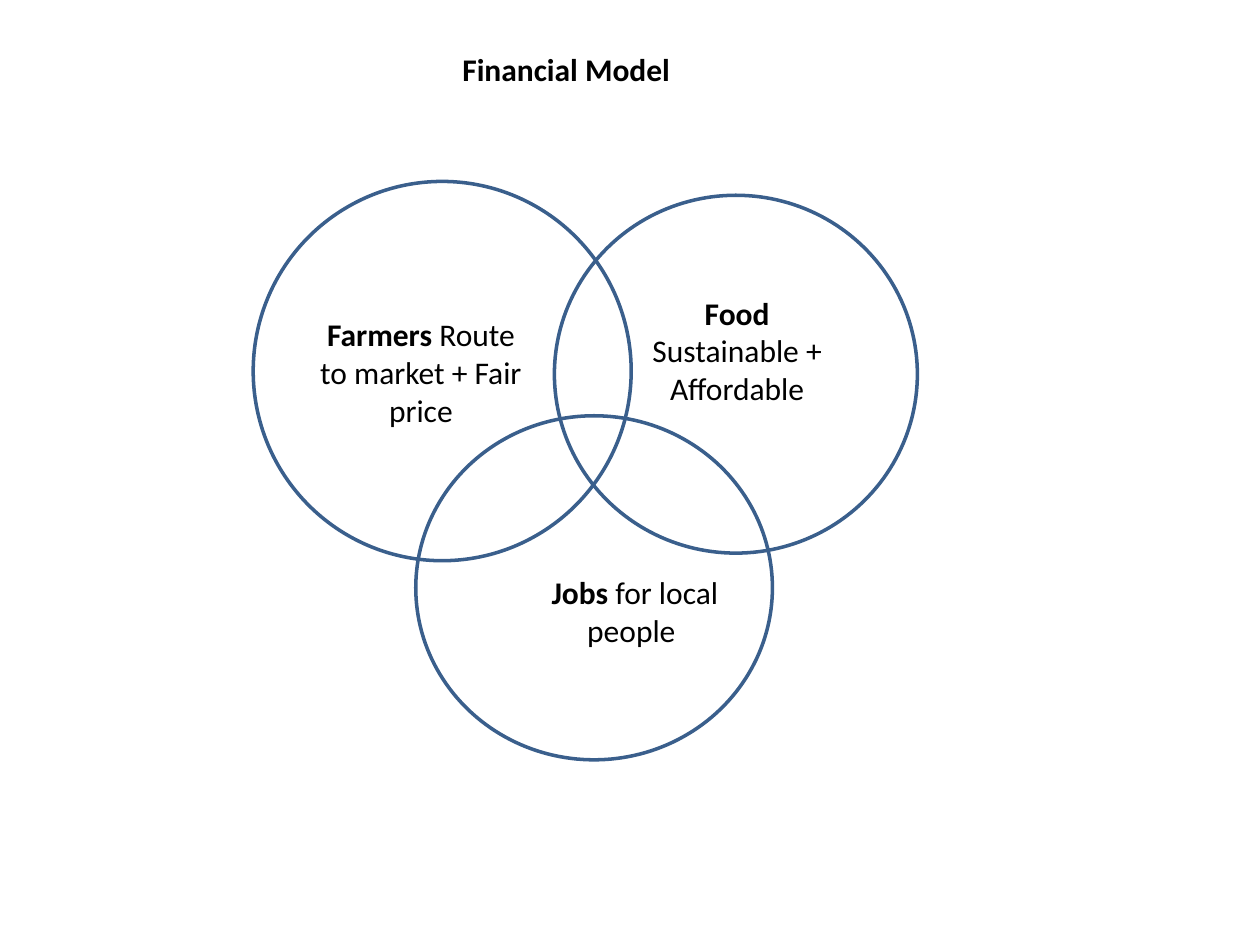
import pptx
import pptx.util
import pptx.dml.color
import pptx.enum.shapes
import pptx.enum.text
from dataclasses import dataclass
from pptx.util import Pt


@dataclass(frozen=True)
class Theme:
    font: str = "Calibri"
    size: float = 18
    text: str = "000000"
    outline: str = "3A5F8C"
    outline_width: float = 2


theme = Theme()
Align = pptx.enum.text.PP_ALIGN


def write_text(shape, paragraphs, *, align=Align.CENTER):
    frame = shape.text_frame
    frame.word_wrap = True
    frame.auto_size = pptx.enum.text.MSO_AUTO_SIZE.NONE
    frame.vertical_anchor = pptx.enum.text.MSO_ANCHOR.TOP
    for index, runs in enumerate(paragraphs):
        paragraph = frame.add_paragraph() if index else frame.paragraphs[0]
        paragraph.alignment = align
        for text, bold in runs:
            run = paragraph.add_run()
            run.text = text
            run.font.name = theme.font
            run.font.size = Pt(theme.size)
            run.font.bold = bold
            run.font.color.rgb = pptx.dml.color.RGBColor.from_string(theme.text)


presentation = pptx.Presentation()
presentation.slide_width = Pt(720)
presentation.slide_height = Pt(540)
slide = presentation.slides.add_slide(presentation.slide_layouts[5])

title = slide.shapes.title
title.left, title.top, title.width, title.height = Pt(257), Pt(25.2), Pt(185), Pt(36.7)
write_text(title, [[("Financial Model", True)]], align=Align.LEFT)

labels = [
    ((175, 176.4, 131, 123.8), [[("Farmers", True), (" Route to market + Fair price", False)]]),
    ((357.1, 164.2, 128.2, 123.8), [[("Food", True)], [("Sustainable + Affordable", False)]]),
    ((300.2, 324, 125.3, 94.3), [[("Jobs", True), (" for local people ", False)]]),
]
for box, paragraphs in labels:
    label = slide.shapes.add_textbox(*map(Pt, box))
    write_text(label, paragraphs)

circles = [
    (144.7, 103.7, 216, 216.7),
    (316.8, 111.6, 207.4, 204.5),
    (237.6, 237.6, 203.8, 196.6),
]
for box in circles:
    circle = slide.shapes.add_shape(pptx.enum.shapes.MSO_SHAPE.OVAL, *map(Pt, box))
    circle.shadow.inherit = False
    circle.fill.background()
    circle.line.color.rgb = pptx.dml.color.RGBColor.from_string(theme.outline)
    circle.line.width = Pt(theme.outline_width)

presentation.save("out.pptx")
